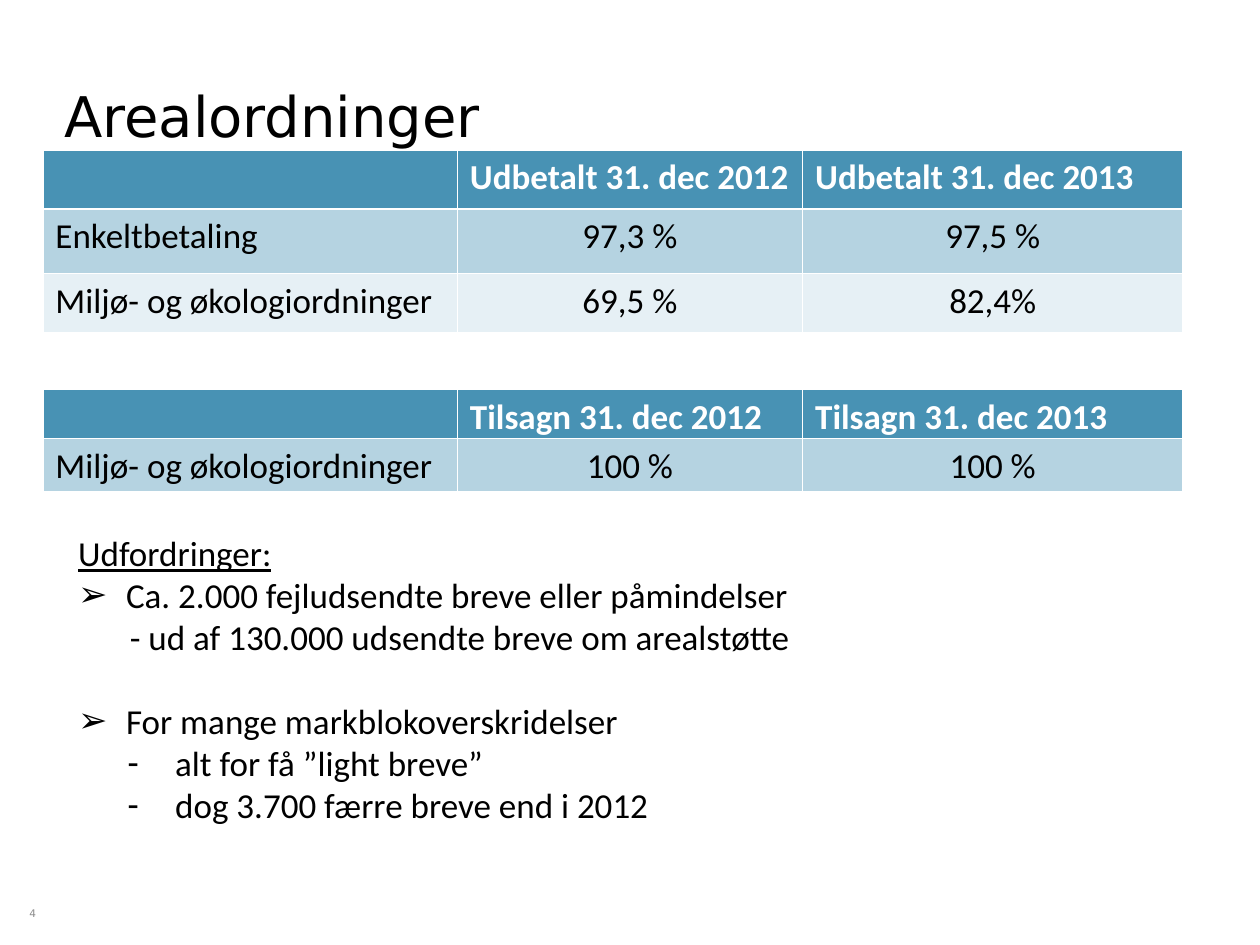
from lxml import etree
from pptx import Presentation
from pptx.dml.color import RGBColor
from pptx.enum.text import MSO_ANCHOR, MSO_AUTO_SIZE, PP_ALIGN
from pptx.oxml.ns import qn
from pptx.util import Inches, Pt

COLORS = {
    "text": "000000",
    "number": "8C8C8C",
    "white": "FFFFFF",
    "header": "4892B4",
    "band": "B5D3E1",
    "light": "E6F0F5",
}


def add_run(paragraph, text, size, color, font_name="Calibri"):
    run = paragraph.add_run()
    run.text = text
    run.font.size = Pt(size)
    run.font.name = font_name
    run.font.color.rgb = RGBColor.from_string(COLORS[color])
    return run


def add_borders(cell):
    """Give a cell white borders, the bottom one thicker."""
    properties = cell._tc.get_or_add_tcPr()
    for tag, width in (("a:lnL", 1), ("a:lnR", 1), ("a:lnT", 1), ("a:lnB", 3)):
        line = etree.SubElement(properties, qn(tag), w=str(Pt(width)))
        fill = etree.SubElement(line, qn("a:solidFill"))
        etree.SubElement(fill, qn("a:srgbClr"), val=COLORS["white"])


presentation = Presentation()
presentation.slide_width = Inches(10)
presentation.slide_height = Inches(7.5)
slide = presentation.slides.add_slide(presentation.slide_layouts[1])

# Title
title = slide.shapes.title
title.left, title.top = Inches(0.51), Inches(0)
title.width, title.height = Inches(8.97), Inches(1.19)
frame = title.text_frame
frame.margin_left = frame.margin_top = frame.margin_right = frame.margin_bottom = 0
frame.vertical_anchor = MSO_ANCHOR.BOTTOM
frame.auto_size = MSO_AUTO_SIZE.NONE
paragraph = frame.paragraphs[0]
paragraph.alignment = PP_ALIGN.LEFT
paragraph.line_spacing = 0.9
add_run(paragraph, "Arealordninger", 32, "text", "DejaVu Sans")

# Slide number
number = slide.shapes.add_textbox(Inches(0), Inches(6.99), Inches(0.52), Inches(0.51))
frame = number.text_frame
frame.word_wrap = True
frame.margin_left = frame.margin_top = frame.margin_right = frame.margin_bottom = 0
frame.vertical_anchor = MSO_ANCHOR.MIDDLE
paragraph = frame.paragraphs[0]
paragraph.alignment = PP_ALIGN.CENTER
add_run(paragraph, "4", 6, "number", "DejaVu Sans")

# Challenges: text, left margin, first-line indent, bullet, space before
challenges = [
    ("Udfordringer:", 0, 0, None, 0),
    ("Ca. 2.000 fejludsendte breve eller påmindelser", 0.38, -0.38, "➢", 0),
    ("- ud af 130.000 udsendte breve om arealstøtte", 0.41, 0, None, 0),
    ("For mange markblokoverskridelser", 0.38, -0.38, "➢", 24),
    ("alt for få ”light breve”", 0.77, -0.38, "-", 0),
    ("dog 3.700 færre breve end i 2012", 0.77, -0.38, "-", 0),
]
body = slide.placeholders[1]
body.left, body.top = Inches(0.52), Inches(4.17)
body.width, body.height = Inches(9.31), Inches(2.46)
frame = body.text_frame
frame.auto_size = MSO_AUTO_SIZE.NONE
for index, (text, margin, indent, bullet, space) in enumerate(challenges):
    paragraph = frame.add_paragraph() if index else frame.paragraphs[0]
    properties = paragraph._p.get_or_add_pPr()
    properties.set("marL", str(Inches(margin)))
    properties.set("indent", str(Inches(indent)))
    if bullet:
        etree.SubElement(properties, qn("a:buChar"), char=bullet)
    else:
        etree.SubElement(properties, qn("a:buNone"))
    paragraph.space_before = Pt(space)
    run = add_run(paragraph, text, 20, "text")
    run.font.underline = index == 0

# Single-row tables, each covering the lower part of the one before
table_rows = [
    (1.19, 0.76, "header", ["", "Udbetalt 31. dec 2012", "Udbetalt 31. dec 2013"]),
    (1.66, 0.76, "band", ["Enkeltbetaling", "97,3 %", "97,5 %"]),
    (2.17, 0.48, "light", ["Miljø- og økologiordninger", "69,5 %", "82,4%"]),
    (3.09, 0.78, "header", ["", "Tilsagn 31. dec 2012", "Tilsagn 31. dec 2013"]),
    (3.48, 0.39, "band", ["Miljø- og økologiordninger", "100 %", "100 %"]),
]
column_widths = [3.29, 2.74, 3.02]
for top, height, fill, texts in table_rows:
    is_header = fill == "header"
    table = slide.shapes.add_table(
        1, 3, Inches(0.34), Inches(top), Inches(sum(column_widths)), Inches(height)
    ).table
    table.first_row = is_header
    table.horz_banding = False
    for column, (text, width) in enumerate(zip(texts, column_widths)):
        table.columns[column].width = Inches(width)
        cell = table.cell(0, column)
        add_borders(cell)
        cell.fill.solid()
        cell.fill.fore_color.rgb = RGBColor.from_string(COLORS[fill])
        if not text:
            continue
        paragraph = cell.text_frame.paragraphs[0]
        if column and not is_header:
            paragraph.alignment = PP_ALIGN.CENTER
        run = add_run(paragraph, text, 20, "white" if is_header else "text")
        run.font.bold = is_header

presentation.save("out.pptx")
